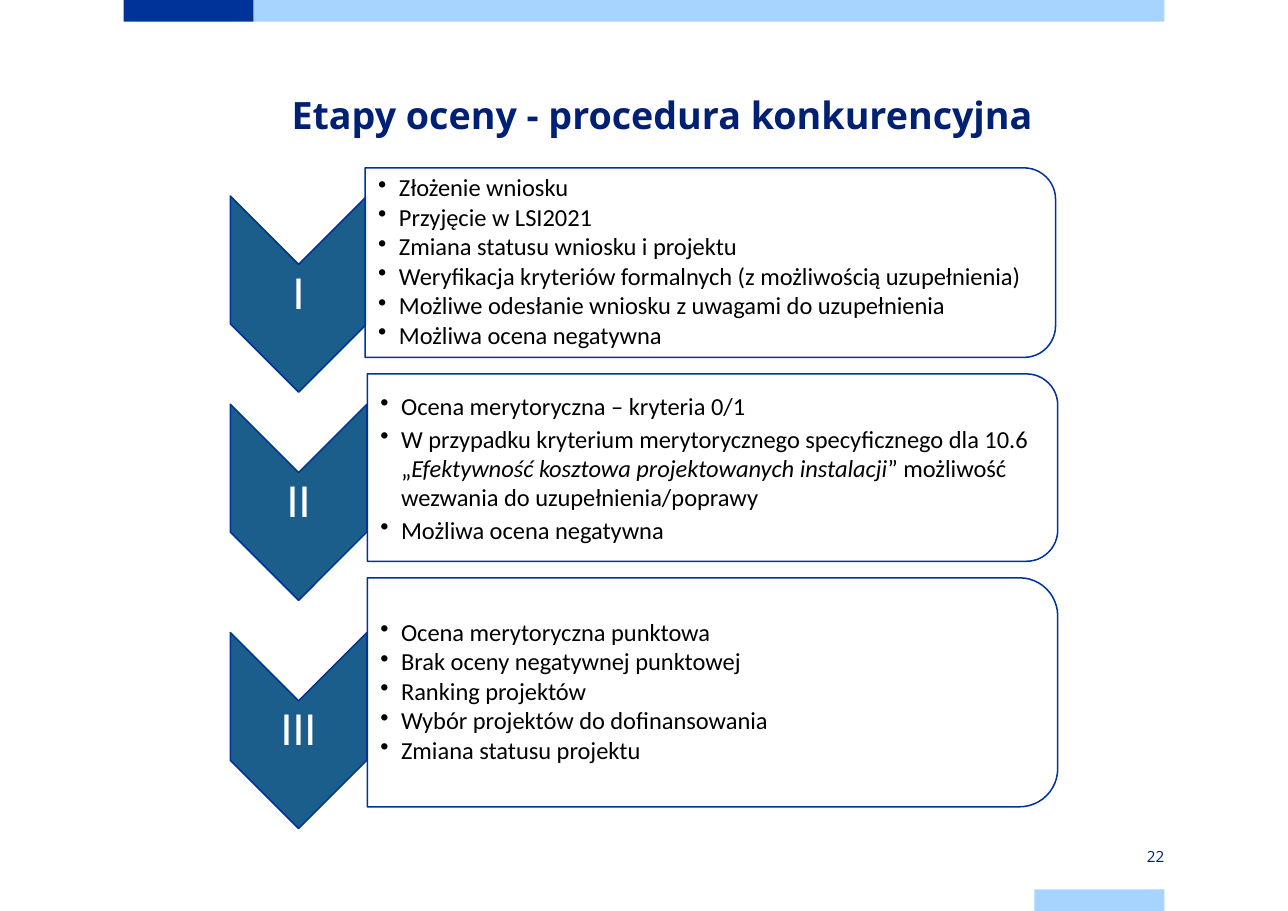
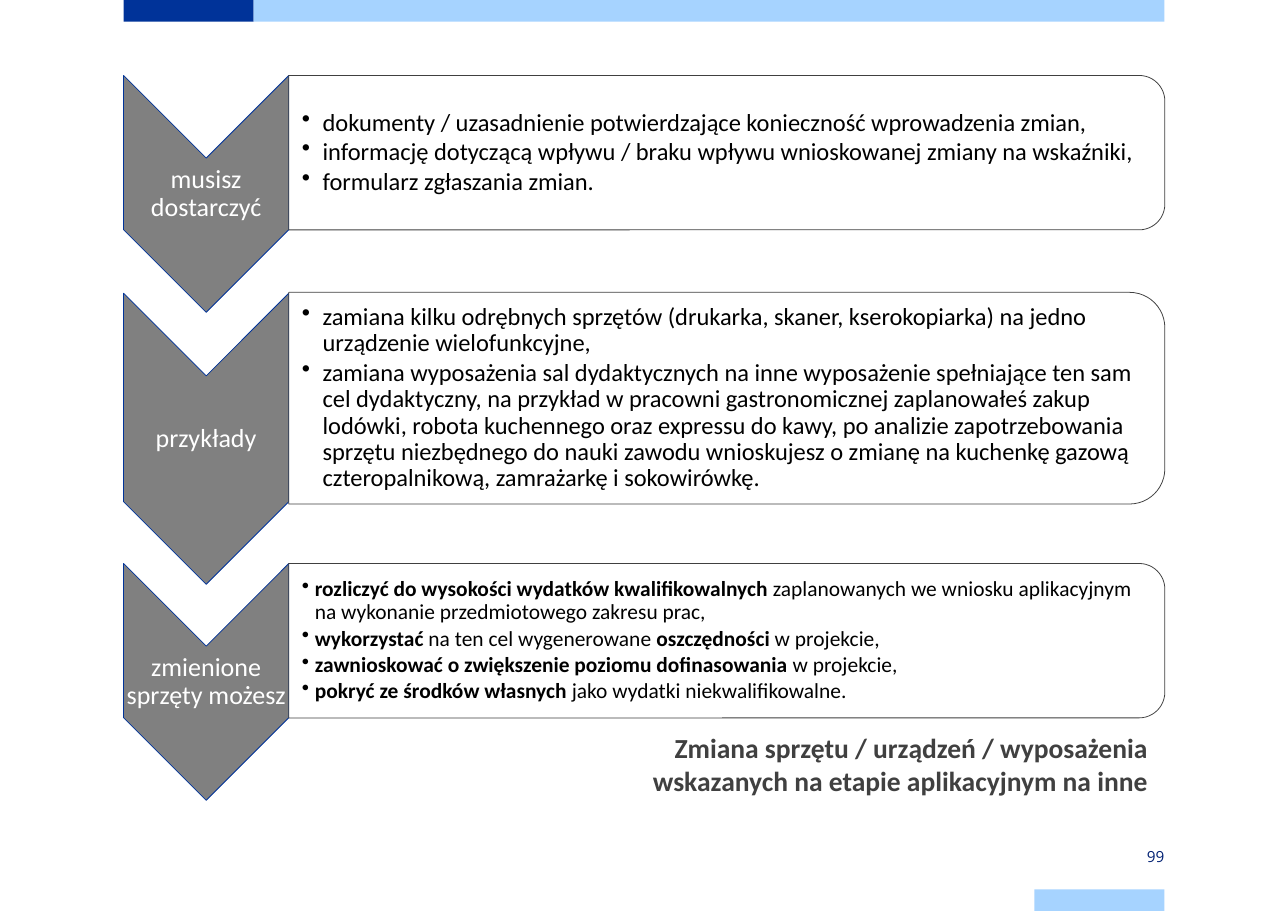
"""Build two slides of stage diagrams: chevron labels beside bulleted panels."""
from typing import NamedTuple

from lxml import etree
from pptx import Presentation
from pptx import util as u
from pptx.dml import color
from pptx.enum import shapes, text
from pptx.oxml import ns

COLORS = {
    "navy": "003399",
    "sky": "A6D3FF",
    "title": "002073",
    "steel": "1B5D8B",
    "gray": "808080",
    "charcoal": "404040",
    "white": "FFFFFF",
    "black": "000000",
}
HEADING_FONT, BODY_FONT = "Open Sans", "Calibri"
CORNER = 0.16667
CORNER_INSET = CORNER * 0.293


class Box(NamedTuple):
    left: float
    top: float
    width: float
    height: float


class Run(NamedTuple):
    text: str
    bold: bool = False
    italic: bool = False


class Stage(NamedTuple):
    label: str
    chevron_top: float
    chevron_height: float
    panel: Box
    bullets: list[list[Run]]
    size: float = 16
    hang: float = 0.48
    spacing: float = 0.9


class Look(NamedTuple):
    chevron_left: float
    chevron_width: float
    chevron_fill: str
    panel_line: str
    line_width: float
    label_size: float
    label_inset: float


def plain(*lines: str) -> list[list[Run]]:
    return [[Run(line)] for line in lines]


BANDS = [
    (Box(2.85, 0, 3, 0.5), "navy"),
    (Box(5.85, 0, 21, 0.5), "sky"),
    (Box(23.85, 20.5, 3, 0.5), "sky"),
]

EVALUATION_LOOK = Look(5.31, 3.15, "steel", "navy", 1, 31, 0.05)
EVALUATION = [
    Stage("I", 4.52, 4.52, Box(8.42, 3.87, 15.92, 4.37), plain(
        "Złożenie wniosku",
        "Przyjęcie w LSI2021",
        "Zmiana statusu wniosku i projektu",
        "Weryfikacja kryteriów formalnych (z możliwością uzupełnienia)",
        "Możliwe odesłanie wniosku z uwagami do uzupełnienia",
        "Możliwa ocena negatywna",
    )),
    Stage("II", 9.32, 4.52, Box(8.47, 8.62, 15.92, 4.32), [
        [Run("Ocena merytoryczna – kryteria 0/1")],
        [Run("W przypadku kryterium merytorycznego specyficznego dla 10.6 „"),
         Run("Efektywność kosztowa projektowanych instalacji", italic=True),
         Run("” możliwość wezwania do uzupełnienia/poprawy")],
        [Run("Możliwa ocena negatywna")],
    ], spacing=1.0),
    Stage("III", 14.58, 4.52, Box(8.47, 13.32, 15.92, 5.28), plain(
        "Ocena merytoryczna punktowa",
        "Brak oceny negatywnej punktowej",
        "Ranking projektów",
        "Wybór projektów do dofinansowania",
        "Zmiana statusu projektu",
    )),
]

EQUIPMENT_LOOK = Look(2.85, 3.81, "gray", "charcoal", 0.5, 17, 0.03)
EQUIPMENT = [
    Stage("musisz dostarczyć", 1.74, 5.46, Box(6.66, 1.74, 20.2, 3.56), plain(
        "dokumenty / uzasadnienie potwierdzające konieczność wprowadzenia zmian,",
        "informację dotyczącą wpływu / braku wpływu wnioskowanej zmiany na wskaźniki,",
        "formularz zgłaszania zmian.",
    )),
    Stage("przykłady", 6.76, 6.71, Box(6.66, 6.74, 20.2, 4.88), plain(
        "zamiana kilku odrębnych sprzętów (drukarka, skaner, kserokopiarka) na jedno "
        "urządzenie wielofunkcyjne,",
        "zamiana wyposażenia sal dydaktycznych na inne wyposażenie spełniające ten sam "
        "cel dydaktyczny, na przykład w pracowni gastronomicznej zaplanowałeś zakup "
        "lodówki, robota kuchennego oraz expressu do kawy, po analizie zapotrzebowania "
        "sprzętu niezbędnego do nauki zawodu wnioskujesz o zmianę na kuchenkę gazową "
        "czteropalnikową, zamrażarkę i sokowirówkę.",
    )),
    Stage("zmienione sprzęty możesz", 12.99, 5.46, Box(6.66, 12.99, 20.2, 3.56), [
        [Run("rozliczyć do wysokości wydatków kwalifikowalnych ", bold=True),
         Run("zaplanowanych we wniosku aplikacyjnym na wykonanie przedmiotowego "
             "zakresu prac,")],
        [Run("wykorzystać", bold=True), Run(" na ten cel wygenerowane "),
         Run("oszczędności", bold=True), Run(" w projekcie,")],
        [Run("zawnioskować o zwiększenie poziomu dofinasowania ", bold=True),
         Run("w projekcie,")],
        [Run("pokryć ze środków własnych ", bold=True),
         Run("jako wydatki niekwalifikowalne.")],
    ], size=14, hang=0.3),
]


def rgb(name: str) -> color.RGBColor:
    return color.RGBColor.from_string(COLORS[name])


def place(box: Box) -> list[u.Length]:
    return [u.Cm(length) for length in box]


def add_text(slide, box: Box, paragraphs: list[list[Run]], *, size: float,
             ink: str, font: str = BODY_FONT, align=text.PP_ALIGN.LEFT,
             anchor=text.MSO_ANCHOR.MIDDLE, insets=(0, 0, 0, 0),
             spacing=1.0, after: float = 0, hang: float = 0) -> None:
    frame = slide.shapes.add_textbox(*place(box)).text_frame
    frame.word_wrap = True
    frame.vertical_anchor = anchor
    (frame.margin_left, frame.margin_top,
     frame.margin_right, frame.margin_bottom) = [u.Cm(i) for i in insets]
    for index, runs in enumerate(paragraphs):
        paragraph = frame.paragraphs[0] if index == 0 else frame.add_paragraph()
        paragraph.alignment = align
        paragraph.line_spacing = spacing
        paragraph.space_after = u.Pt(after)
        if hang:
            properties = paragraph._p.get_or_add_pPr()
            properties.set("marL", str(u.Cm(hang)))
            properties.set("indent", str(-u.Cm(hang)))
            etree.SubElement(properties, ns.qn("a:buChar")).set("char", "•")
        for part in runs:
            run = paragraph.add_run()
            run.text = part.text
            run.font.name = font
            run.font.size = u.Pt(size)
            run.font.bold = part.bold
            run.font.italic = part.italic
            run.font.color.rgb = rgb(ink)


def add_block(slide, kind, box: Box, fill: str, line: str = "",
              line_width: float = 0):
    block = slide.shapes.add_shape(kind, *place(box))
    block.shadow.inherit = False
    block.fill.solid()
    block.fill.fore_color.rgb = rgb(fill)
    if line:
        block.line.color.rgb = rgb(line)
        block.line.width = u.Pt(line_width)
    else:
        block.line.fill.background()
    return block


def add_turned(slide, kind, box: Box, fill: str, line: str, line_width: float):
    shift = (box.width - box.height) / 2
    upright = Box(box.left + shift, box.top - shift, box.height, box.width)
    block = add_block(slide, kind, upright, fill, line, line_width)
    block.rotation = 90
    return block


def add_stage(slide, stage: Stage, look: Look) -> None:
    chevron = Box(look.chevron_left, stage.chevron_top,
                  look.chevron_width, stage.chevron_height)
    add_turned(slide, shapes.MSO_SHAPE.CHEVRON, chevron,
               look.chevron_fill, "navy", look.line_width)
    label_box = Box(chevron.left, chevron.top + chevron.width / 2,
                    chevron.width, chevron.height - chevron.width)
    add_text(slide, label_box, plain(stage.label), size=look.label_size,
             ink="white", align=text.PP_ALIGN.CENTER,
             insets=(look.label_inset,) * 4, spacing=0.9)

    panel = add_turned(slide, shapes.MSO_SHAPE.ROUND_2_SAME_RECTANGLE, stage.panel,
                       "white", look.panel_line, look.line_width)
    panel.adjustments[0] = CORNER
    tint = panel._element.spPr.find(ns.qn("a:solidFill"))[0]
    etree.SubElement(tint, ns.qn("a:alpha")).set("val", "90000")
    left, top, width, height = stage.panel
    inset = height * CORNER_INSET
    add_text(slide, Box(left, top + inset, width - inset, height - 2 * inset),
             stage.bullets, size=stage.size, ink="black",
             insets=(0.3, 0.03, 0.03, 0.03), spacing=stage.spacing,
             after=2, hang=stage.hang)


def add_stage_slide(deck, number: int, stages: list[Stage], look: Look):
    slide = deck.slides.add_slide(deck.slide_layouts[6])
    for box, fill in BANDS:
        add_block(slide, shapes.MSO_SHAPE.RECTANGLE, box, fill)
    for stage in stages:
        add_stage(slide, stage, look)
    add_text(slide, Box(23.85, 19.5, 3, 0.5), plain(str(number)), size=10,
             ink="title", font=HEADING_FONT, align=text.PP_ALIGN.RIGHT)
    return slide


def main() -> None:
    deck = Presentation()
    deck.slide_width, deck.slide_height = u.Cm(29.7), u.Cm(21)

    evaluation = add_stage_slide(deck, 22, EVALUATION, EVALUATION_LOOK)
    add_text(evaluation, Box(5.72, 1.88, 19.1, 1.52),
             [[Run("Etapy oceny - procedura konkurencyjna", bold=True)]],
             size=24.6, ink="title", font=HEADING_FONT,
             align=text.PP_ALIGN.CENTER, anchor=text.MSO_ANCHOR.TOP,
             spacing=u.Pt(36))

    equipment = add_stage_slide(deck, 99, EQUIPMENT, EQUIPMENT_LOOK)
    add_text(equipment, Box(13.92, 16.71, 12.8, 1.8),
             [[Run("Zmiana sprzętu / urządzeń / wyposażenia wskazanych "
                   "na etapie aplikacyjnym na inne", bold=True)]],
             size=18, ink="charcoal", align=text.PP_ALIGN.RIGHT,
             anchor=text.MSO_ANCHOR.TOP, insets=(0.25, 0.13, 0.25, 0.13))

    deck.save("out.pptx")


if __name__ == "__main__":
    main()
